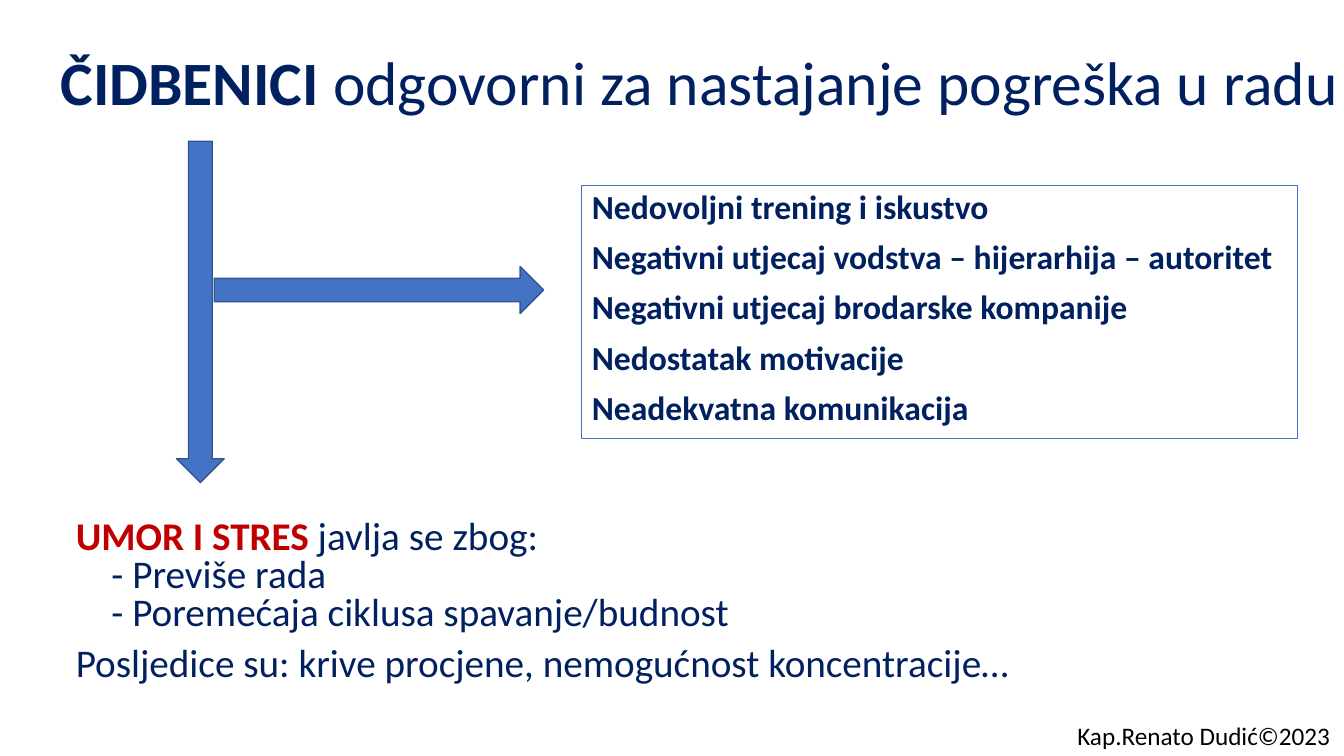
import pptx
import pptx.dml.color
import pptx.enum.shapes
import pptx.enum.text
import pptx.oxml.ns
import pptx.util
from dataclasses import dataclass
from lxml import etree

Cm = pptx.util.Cm
Pt = pptx.util.Pt
Shape = pptx.enum.shapes.MSO_SHAPE


@dataclass(frozen=True)
class Theme:
    font: str = "Calibri"
    navy: str = "002060"
    red: str = "C00000"
    black: str = "000000"
    blue: str = "4472C4"
    edge: str = "325491"
    head: int = 44
    text: int = 28
    list: int = 24
    foot: int = 18


THEME = Theme()


def color(code):
    return pptx.dml.color.RGBColor.from_string(code)


def place(shape, box):
    shape.left, shape.top, shape.width, shape.height = [Cm(n) for n in box]


def set_frame(shape, wrap=True):
    frame = shape.text_frame
    frame.word_wrap = wrap
    frame.auto_size = pptx.enum.text.MSO_AUTO_SIZE.NONE
    frame.vertical_anchor = pptx.enum.text.MSO_ANCHOR.TOP
    return frame


def add_run(para, text, size, tint=THEME.navy, bold=False):
    run = para.add_run()
    run.text = text
    font = run.font
    font.name, font.size, font.bold = THEME.font, Pt(size), bold
    font.color.rgb = color(tint)


def add_para(frame, first, lines=1.0, before=0, indent=0):
    """Start a left-aligned paragraph without a bullet."""
    para = frame.paragraphs[0] if first else frame.add_paragraph()
    para.alignment = pptx.enum.text.PP_ALIGN.LEFT
    para.line_spacing = lines
    para.space_before = Pt(before)
    props = para._p.get_or_add_pPr()
    props.set("marL", str(Cm(indent)))
    props.set("indent", "0")
    etree.SubElement(props, pptx.oxml.ns.qn("a:buNone"))
    return para


def add_title(slide):
    title = slide.shapes.title
    place(title, (1.27, 0.97, 33.1, 2.13))
    para = add_para(set_frame(title), True)
    add_run(para, "ČIDBENICI", THEME.head, bold=True)
    add_run(para, " odgovorni za nastajanje pogreška u radu", THEME.head)


def add_list(slide, items):
    body = slide.placeholders[1]
    place(body, (14.66, 4.67, 18.03, 6.38))
    body.line.color.rgb = color(THEME.blue)
    body.line.width = Pt(0.75)
    frame = set_frame(body)
    for i, item in enumerate(items):
        para = add_para(frame, i == 0, 0.9, 10)
        add_run(para, item, THEME.list, bold=True)


def add_text(slide, box, wrap=True):
    shape = slide.shapes.add_textbox(*[Cm(n) for n in box])
    return set_frame(shape, wrap)


def add_stress(slide):
    frame = add_text(slide, (1.66, 13, 31.9, 5.87))
    para = add_para(frame, True, 0.8, 10)
    add_run(para, "UMOR I STRES ", THEME.text, THEME.red, True)
    add_run(para, "javlja se zbog:", THEME.text)
    rows = [
        ("- Previše rada", 0, 0.9),
        ("- Poremećaja ciklusa spavanje/budnost", 0, 0.9),
        ("Posljedice su: krive procjene, nemogućnost koncentracije…", 10, 0),
    ]
    for text, before, indent in rows:
        add_run(add_para(frame, False, 0.8, before, indent), text, THEME.text)


def add_arrow(slide, kind, box):
    arrow = slide.shapes.add_shape(kind, *[Cm(n) for n in box])
    arrow.shadow.inherit = False
    arrow.fill.solid()
    arrow.fill.fore_color.rgb = color(THEME.blue)
    arrow.line.color.rgb = color(THEME.edge)
    arrow.line.width = Pt(1)


def add_foot(slide):
    frame = add_text(slide, (26.9, 18.03, 6.96, 1.02), wrap=False)
    add_run(add_para(frame, True), "Kap.Renato Dudić©2023", THEME.foot, THEME.black)


def main():
    deck = pptx.Presentation()
    deck.slide_width, deck.slide_height = Cm(33.87), Cm(19.05)
    slide = deck.slides.add_slide(deck.slide_layouts[1])

    # Heading and causes
    add_title(slide)
    add_list(slide, [
        "Nedovoljni trening i iskustvo",
        "Negativni utjecaj vodstva – hijerarhija – autoritet",
        "Negativni utjecaj brodarske kompanije",
        "Nedostatak motivacije",
        "Neadekvatna komunikacija",
    ])

    # Fatigue and stress
    add_stress(slide)

    # Arrows to both groups
    add_arrow(slide, Shape.DOWN_ARROW, (4.45, 3.56, 1.2, 8.6))
    add_arrow(slide, Shape.RIGHT_ARROW, (5.4, 6.72, 8.3, 1.18))

    # Credit line
    add_foot(slide)
    deck.save("out.pptx")


if __name__ == "__main__":
    main()
